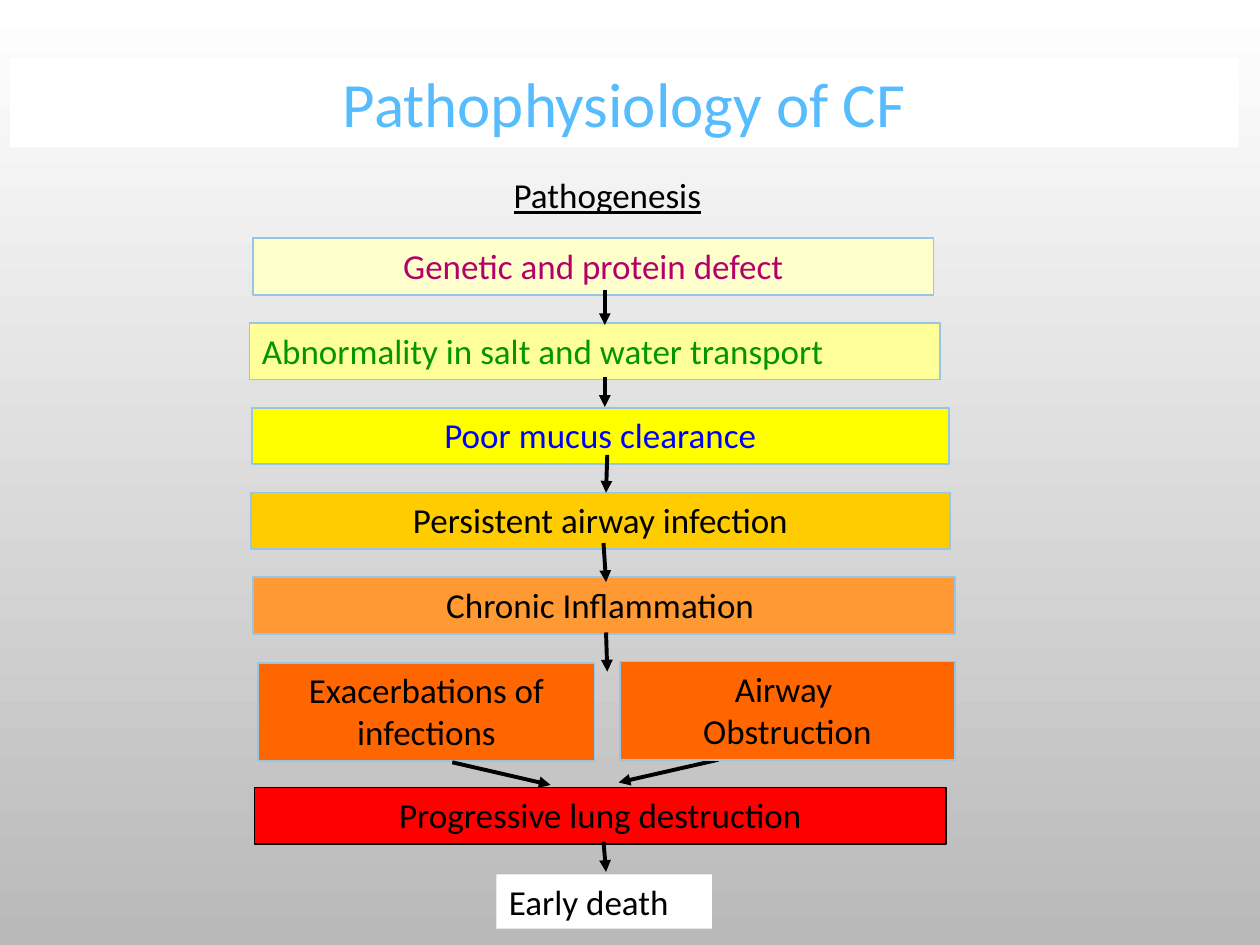
import pptx
import pptx.util
import pptx.dml.color
import pptx.enum.shapes
import pptx.enum.text
import pptx.oxml
import pptx.oxml.ns
import lxml.etree

Inches, Pt = pptx.util.Inches, pptx.util.Pt
ALIGN = pptx.enum.text.PP_ALIGN
LEFT, CENTER = ALIGN.LEFT, ALIGN.CENTER
color = pptx.dml.color.RGBColor.from_string


def write(shape, text, size, text_color, alignment, underline=None):
    frame = shape.text_frame
    settings = {
        "word_wrap": True,
        "auto_size": pptx.enum.text.MSO_AUTO_SIZE.NONE,
        "vertical_anchor": pptx.enum.text.MSO_ANCHOR.TOP,
        "margin_left": Inches(0.1), "margin_right": Inches(0.1),
        "margin_top": Inches(0.05), "margin_bottom": Inches(0.05),
    }
    for name, value in settings.items():
        setattr(frame, name, value)
    frame.text = text
    font_format = {"name": "Calibri", "size": Pt(size), "underline": underline}
    for paragraph in frame.paragraphs:
        paragraph.alignment = alignment
        for run in paragraph.runs:
            for name, value in font_format.items():
                setattr(run.font, name, value)
            run.font.color.rgb = color(text_color)


def add_box(place, text, fill, text_color="000000", outline="97C5E3", alignment=CENTER):
    box = slide.shapes.add_shape(
        pptx.enum.shapes.MSO_SHAPE.RECTANGLE, *map(Inches, place))
    box.shadow.inherit = False
    box.fill.solid()
    box.fill.fore_color.rgb = color(fill)
    if outline:
        box.line.color.rgb = color(outline)
        box.line.width = Pt(1)
    else:
        box.line.fill.background()
    write(box, text, 20, text_color, alignment)


presentation = pptx.Presentation()
presentation.slide_width, presentation.slide_height = Inches(10), Inches(7.5)
slide = presentation.slides.add_slide(presentation.slide_layouts[5])

background = slide.background.fill
background.gradient()
background.gradient_angle = 270
for stop, position, stop_color in zip(background.gradient_stops, (0, 1), ("FFFFFF", "B9B9B9")):
    stop.position = position
    stop.color.rgb = color(stop_color)

title = slide.shapes.title
title_place = {"left": 0.08, "top": 0.46, "width": 9.75, "height": 0.71}
for name, value in title_place.items():
    setattr(title, name, Inches(value))
title.fill.solid()
title.fill.fore_color.rgb = color("FFFFFF")
write(title, "Pathophysiology of CF", 36, "56BCFE", CENTER)

heading = slide.shapes.add_textbox(*map(Inches, (3.16, 1.33, 3.32, 0.43)))
write(heading, "Pathogenesis", 20, "000000", CENTER, underline=True)

# Cascade of stages, one row each
first_row, row_pitch, row_height = 1.89, 0.673, 0.45
stages = [
    (2.01, 5.40, "Genetic and protein defect", "FFFFCC", "B50069", CENTER),
    (1.98, 5.48, "Abnormality in salt and water transport", "FFFF99", "029600", LEFT),
    (2.00, 5.53, "Poor mucus clearance", "FFFF00", "0000FF", CENTER),
    (1.99, 5.55, "Persistent airway infection", "FFCC00", "000000", CENTER),
    (2.01, 5.57, "Chronic Inflammation ", "FF9933", "000000", CENTER),
]
for row, (left, width, text, fill, text_color, alignment) in enumerate(stages):
    place = (left, first_row + row * row_pitch, width, row_height)
    add_box(place, text, fill, text_color, alignment=alignment)

add_box((2.05, 5.26, 2.67, 0.78), "Exacerbations of infections", "FF6600")
add_box((2.02, 6.25, 5.49, row_height), "Progressive lung destruction", "FF0000",
        outline="000000")
add_box((3.94, 6.94, 1.71, 0.43), "Early death", "FFFFFF", outline=None, alignment=LEFT)

arrows = [
    (4.80, 2.30, 4.80, 2.58),
    (4.80, 2.99, 4.80, 3.23),
    (4.82, 3.61, 4.81, 3.91),
    (4.79, 4.31, 4.81, 4.62),
    (4.81, 5.02, 4.82, 5.33),
    (3.59, 6.05, 4.37, 6.23),
    (5.70, 6.03, 4.91, 6.21),
    (4.79, 6.68, 4.81, 6.92),
]
for ends in arrows:
    arrow = slide.shapes.add_connector(
        pptx.enum.shapes.MSO_CONNECTOR.STRAIGHT, *map(Inches, ends))
    arrow.line.color.rgb = color("000000")
    arrow.line.width = Pt(2.25)
    properties = arrow.element.spPr
    line = properties.find(pptx.oxml.ns.qn("a:ln"))
    lxml.etree.SubElement(line, pptx.oxml.ns.qn("a:tailEnd"), type="triangle")
    lxml.etree.SubElement(properties, pptx.oxml.ns.qn("a:effectLst"))

# Drawn last so that it covers the start of its arrow
add_box((4.92, 5.25, 2.66, 0.78), "Airway \nObstruction", "FF6600")

presentation.save("out.pptx")
